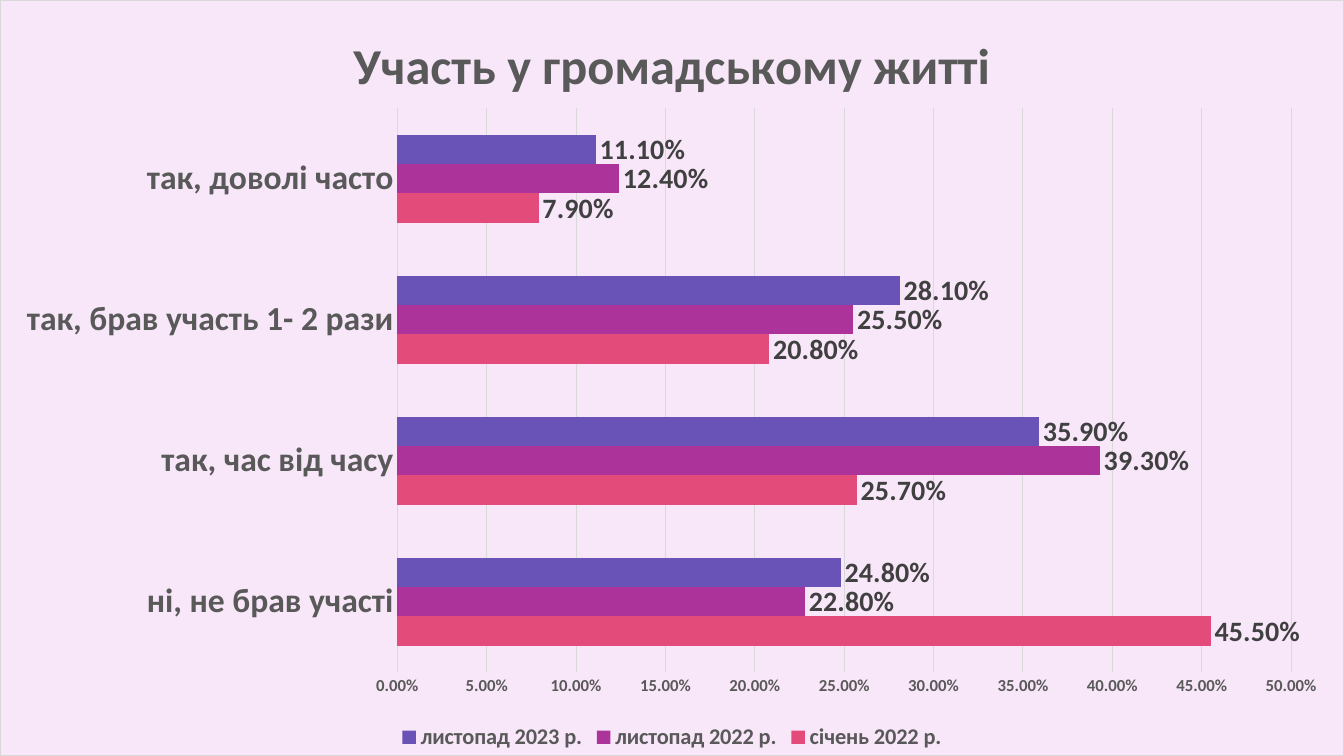
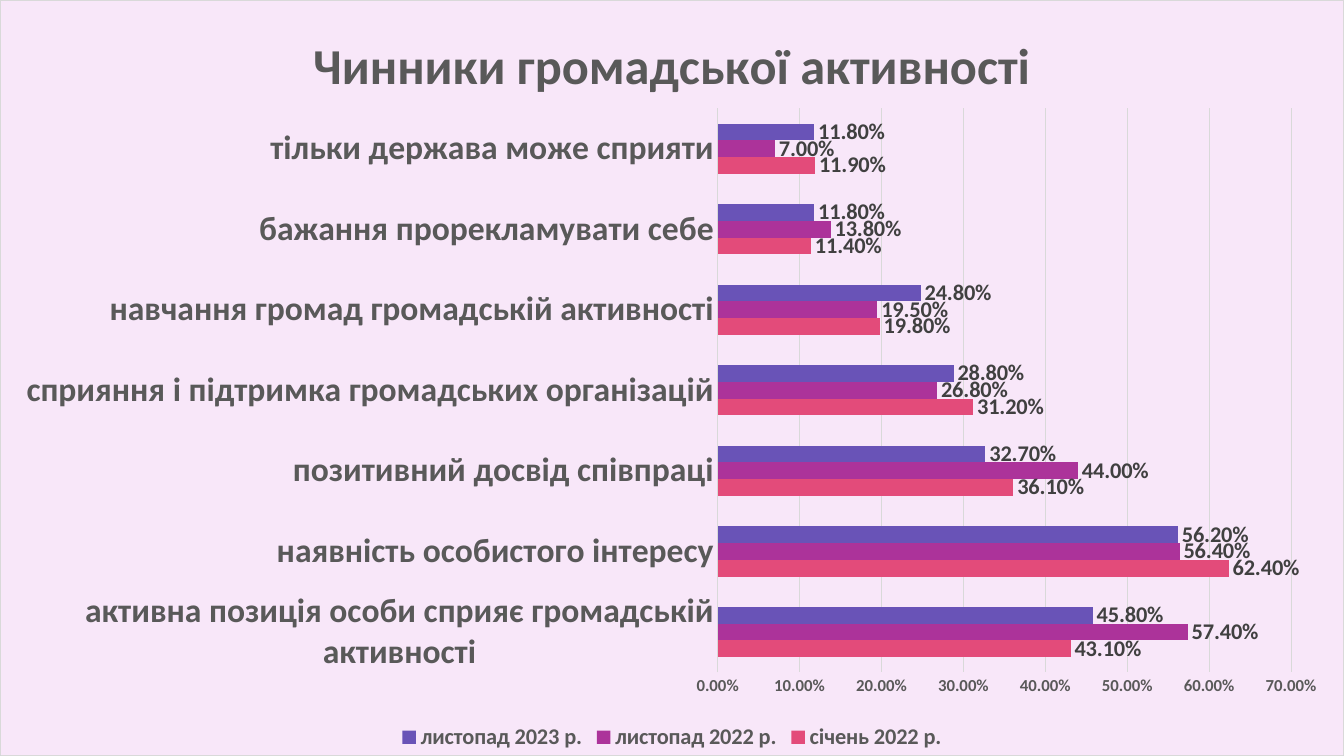
import dataclasses

import pptx
import pptx.chart.data
import pptx.dml.color
import pptx.enum.chart
import pptx.oxml
import pptx.oxml.ns
import pptx.util

Cm = pptx.util.Cm
Pt = pptx.util.Pt
RGB = pptx.dml.color.RGBColor.from_string
Enums = pptx.enum.chart


@dataclasses.dataclass(frozen=True)
class Theme:
    width: float = 33.87
    height: float = 19.05
    font: str = "Calibri"
    gradient: tuple = ("E9C8EF", "89AEDB")
    panel: str = "F8E7F9"
    line: str = "D9D9D9"
    line_width: float = 0.75
    text: str = "595959"
    label: str = "404040"
    title_size: int = 36
    category_size: int = 24
    legend_size: int = 16
    scale_size: int = 12
    gap: int = 182
    percent: str = "0.00%"


THEME = Theme()

# Survey waves, bottom bar first
WAVES = (
    ("січень 2022 р.", "E34B7A"),
    ("листопад 2022 р.", "AC339A"),
    ("листопад 2023 р.", "6953B7"),
)

# Plot left and width are fractions of the chart box
SLIDES = (
    dict(
        title="Участь у громадському житті",
        rows=(
            ("ні, не брав участі", 0.455, 0.228, 0.248),
            ("так, час від часу", 0.257, 0.393, 0.359),
            ("так, брав участь 1- 2 рази", 0.208, 0.255, 0.281),
            ("так, доволі часто", 0.079, 0.124, 0.111),
        ),
        plot_left=0.2955, top_value=0.5, step=0.05, label_size=20,
    ),
    dict(
        title="Чинники громадської активності",
        rows=(
            ("активна позиція особи сприяє громадській активності", 0.431, 0.574, 0.458),
            ("наявність особистого інтересу", 0.624, 0.564, 0.562),
            ("позитивний досвід співпраці", 0.361, 0.44, 0.327),
            ("сприяння і підтримка громадських організацій", 0.312, 0.268, 0.288),
            ("навчання громад громадській активності", 0.198, 0.195, 0.248),
            ("бажання прорекламувати себе", 0.114, 0.138, 0.118),
            ("тільки держава може сприяти", 0.119, 0.07, 0.118),
        ),
        plot_left=0.534, top_value=0.7, step=0.1, label_size=16,
    ),
)


def style_font(font, size, color=THEME.text, bold=True):
    font.name = THEME.font
    font.size = Pt(size)
    font.bold = bold
    font.color.rgb = RGB(color)


def write_text(frame, text, **style):
    span = frame.paragraphs[0].add_run()
    span.text = text
    style_font(span.font, **style)


def style_line(line):
    line.color.rgb = RGB(THEME.line)
    line.width = Pt(THEME.line_width)


def paint_background(page):
    fill = page.background.fill
    fill.gradient()
    fill.gradient_angle = 270
    for stop, color in zip(fill.gradient_stops, THEME.gradient):
        stop.color.rgb = RGB(color)


def paint_panel(chart):
    """Fill and outline the whole chart area."""
    panel = pptx.oxml.parse_xml(
        f'<c:spPr {pptx.oxml.ns.nsdecls("c", "a")}>'
        f'<a:solidFill><a:srgbClr val="{THEME.panel}"/></a:solidFill>'
        f'<a:ln w="{Pt(THEME.line_width)}"><a:solidFill>'
        f'<a:srgbClr val="{THEME.line}"/></a:solidFill></a:ln></c:spPr>')
    chart.element.xpath("c:chart")[0].addnext(panel)


def place_plot(chart, left, top=0.143, right=0.961, bottom=0.89):
    """Fix the inner plot area, in fractions of the chart box."""
    area = chart.element.xpath("c:chart/c:plotArea")[0]
    for old in area.xpath("c:layout"):
        area.remove(old)
    sizes = dict(x=left, y=top, w=right - left, h=bottom - top)
    modes = "".join(f'<c:{side}Mode val="edge"/>' for side in "xy")
    values = "".join(f'<c:{key} val="{value:.4f}"/>' for key, value in sizes.items())
    area.insert(0, pptx.oxml.parse_xml(
        f'<c:layout {pptx.oxml.ns.nsdecls("c")}><c:manualLayout>'
        f'<c:layoutTarget val="inner"/>{modes}{values}</c:manualLayout></c:layout>'))


def style_axes(chart, top_value, step):
    categories, scale = chart.category_axis, chart.value_axis
    for axis, size in ((categories, THEME.category_size), (scale, THEME.scale_size)):
        axis.major_tick_mark = axis.minor_tick_mark = Enums.XL_TICK_MARK.NONE
        style_font(axis.tick_labels.font, size)
    style_line(categories.format.line)
    scale.format.line.fill.background()
    scale.has_major_gridlines = True
    style_line(scale.major_gridlines.format.line)
    scale.minimum_scale, scale.maximum_scale = 0, top_value
    scale.major_unit = step
    scale.tick_labels.number_format = THEME.percent
    scale.tick_labels.number_format_is_linked = False


def style_bars(plot, label_size):
    plot.gap_width, plot.overlap = THEME.gap, 0
    plot.vary_by_categories = False
    for series, (_, color) in zip(plot.series, WAVES):
        series.format.fill.solid()
        series.format.fill.fore_color.rgb = RGB(color)
        series.invert_if_negative = False
        labels = series.data_labels
        labels.show_value = True
        labels.position = Enums.XL_LABEL_POSITION.OUTSIDE_END
        labels.number_format = THEME.percent
        labels.number_format_is_linked = False
        style_font(labels.font, label_size, THEME.label)


def add_survey_chart(page, box, title, rows, plot_left, top_value, step, label_size):
    names, *columns = zip(*rows)
    data = pptx.chart.data.CategoryChartData(number_format=THEME.percent)
    data.categories = names
    for (wave, _), values in zip(WAVES, columns):
        data.add_series(wave, values)
    chart = page.shapes.add_chart(
        Enums.XL_CHART_TYPE.BAR_CLUSTERED, *box, data).chart
    style_font(chart.font, 10, "000000", bold=False)
    paint_panel(chart)
    place_plot(chart, plot_left)

    # Title and legend
    chart.has_title = True
    write_text(chart.chart_title.text_frame, title, size=THEME.title_size)
    chart.chart_title.include_in_layout = False
    chart.has_legend = True
    chart.legend.position = Enums.XL_LEGEND_POSITION.BOTTOM
    chart.legend.include_in_layout = False
    style_font(chart.legend.font, THEME.legend_size)

    # Axes and bars
    style_axes(chart, top_value, step)
    style_bars(chart.plots[0], label_size)


def main():
    deck = pptx.Presentation()
    deck.slide_width, deck.slide_height = Cm(THEME.width), Cm(THEME.height)
    box = (0, 0, deck.slide_width, deck.slide_height)
    for content in SLIDES:
        page = deck.slides.add_slide(deck.slide_layouts[6])
        paint_background(page)
        add_survey_chart(page, box, **content)
    deck.save("out.pptx")


if __name__ == "__main__":
    main()
